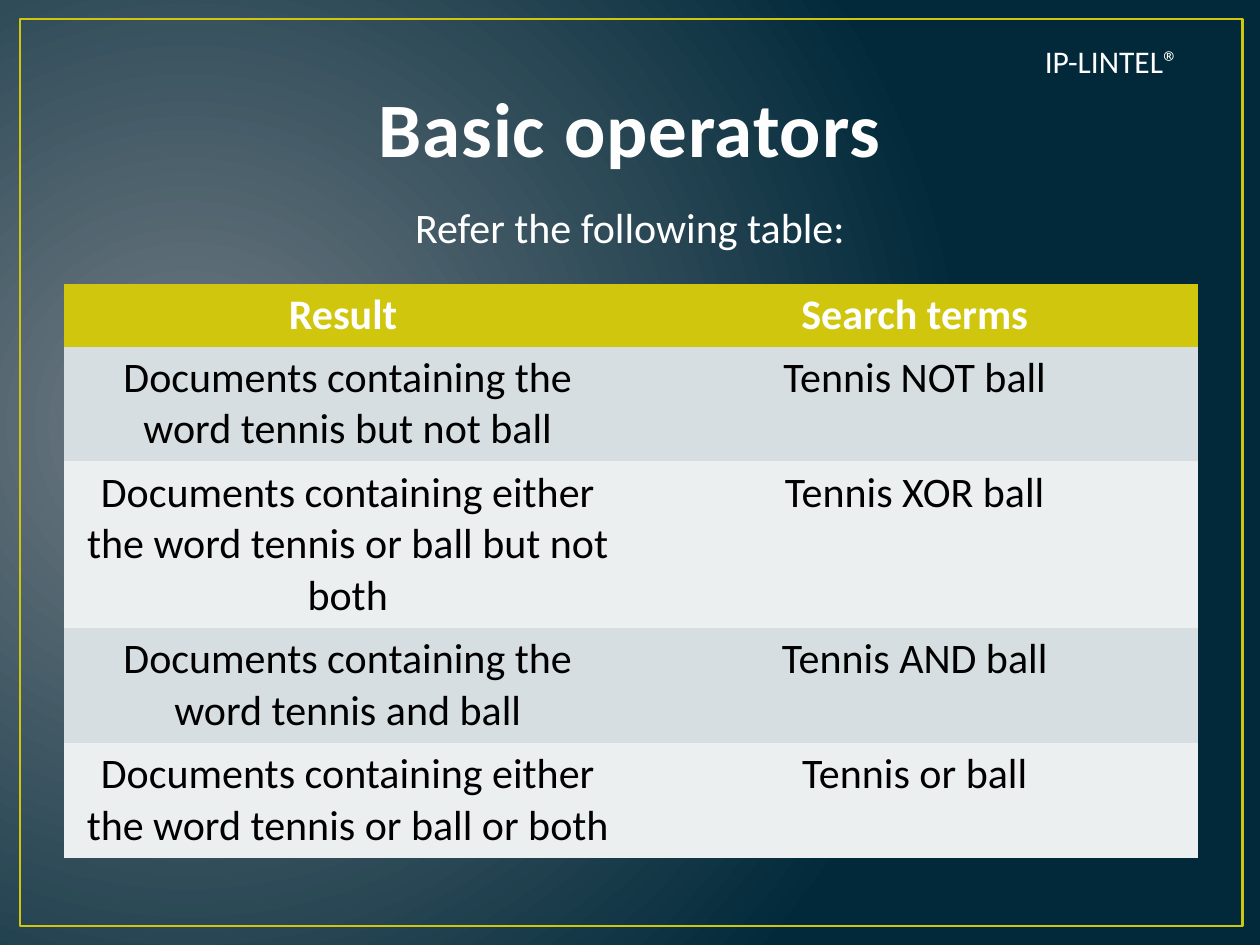
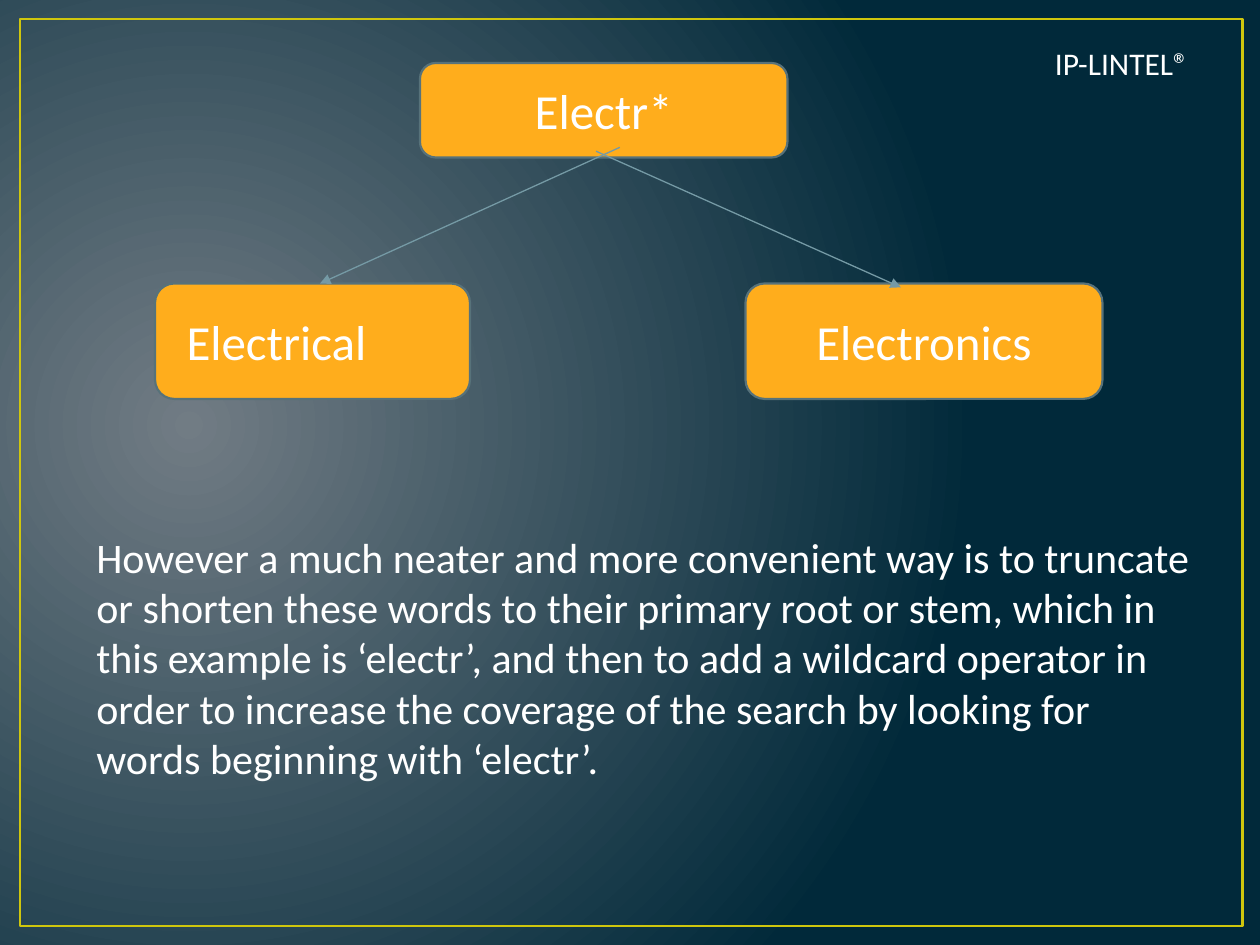
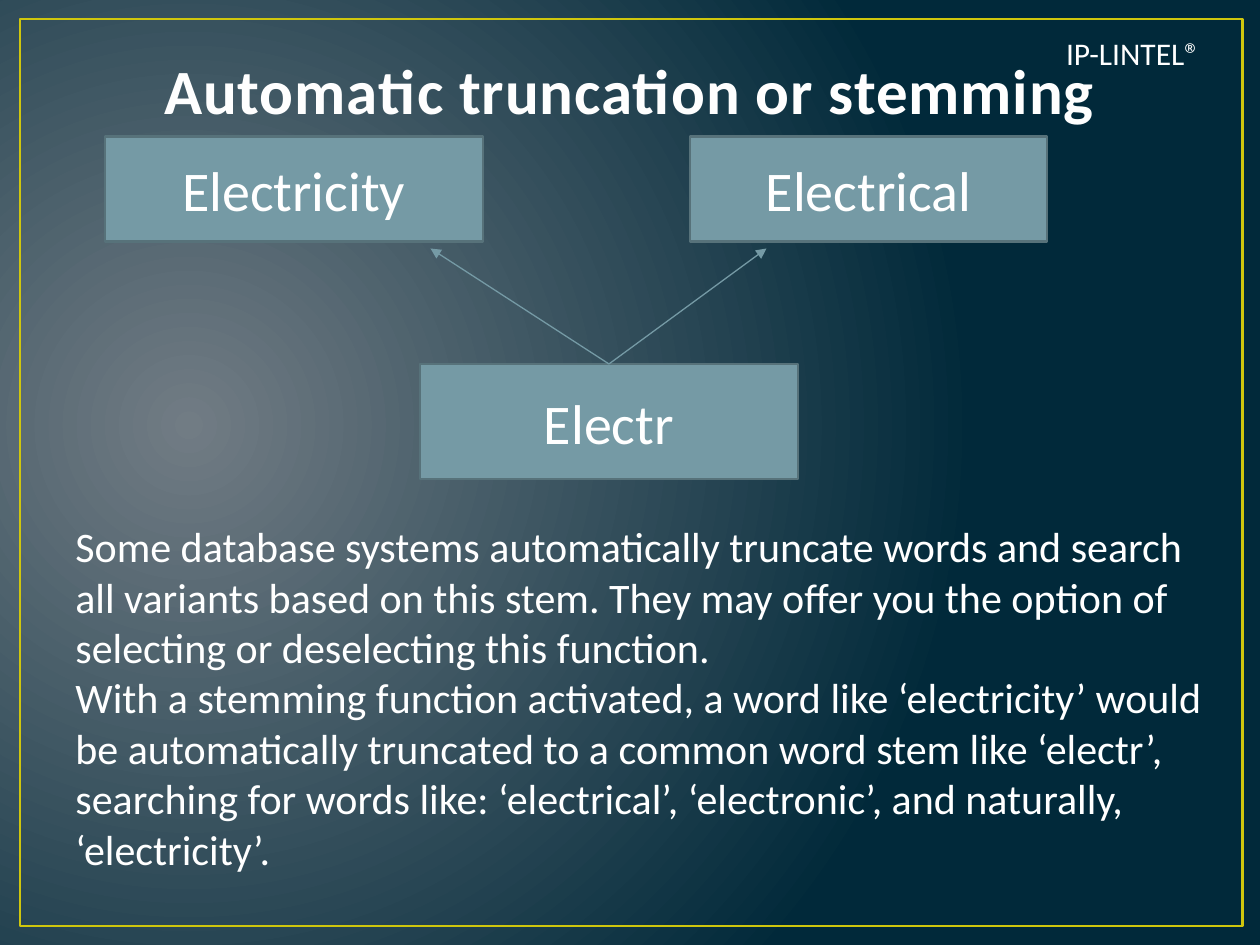
from lxml import etree
from pptx import Presentation
from pptx import util as u
from pptx.dml.color import RGBColor
from pptx.enum import shapes, text
from pptx.oxml import ns

WHITE = RGBColor(0xFF, 0xFF, 0xFF)
TITLE_WHITE = RGBColor(0xFE, 0xFE, 0xFE)
BLACK = RGBColor(0, 0, 0)
GLOW_GREY = RGBColor(0x71, 0x7C, 0x84)
DEEP_BLUE = RGBColor(0x01, 0x29, 0x3A)
LIME = RGBColor(0xCF, 0xC6, 0x0D)
AMBER = RGBColor(0xFF, 0xAD, 0x1C)
STEEL = RGBColor(0x75, 0x9A, 0xA5)
STEEL_DARK = RGBColor(0x57, 0x72, 0x7A)
BANDS = [RGBColor(0xD6, 0xDE, 0xE1), RGBColor(0xEC, 0xEF, 0xF0)]

PAGE_WIDTH, PAGE_HEIGHT = 720, 540
BASE_FONT = {"name": "Calibri", "size": u.Pt(24), "bold": False}
CENTER = text.PP_ALIGN.CENTER
NO_TABLE_STYLE = "{2D5ABB26-0587-4C30-8999-92F81FD0307C}"

# Row height, then the cells
SEARCH_ROWS = [
    (36, "Result ", "Search terms"),
    (65.7, "Documents containing the word tennis but not ball",
     "Tennis NOT ball"),
    (95, "Documents containing either the word tennis or ball but not both",
     "Tennis XOR ball"),
    (65.7, "Documents containing the word tennis and ball",
     "Tennis AND ball"),
    (65.7, "Documents containing either the word tennis or ball or both",
     "Tennis or ball"),
]
WILDCARD_TEXT = [
    "However a much neater and more convenient way is to truncate or shorten "
    "these words to their primary root or stem, which in this example is "
    "‘electr’, and then to add a wildcard operator in order to increase the "
    "coverage of the search by looking for words beginning with ‘electr’.",
]
STEMMING_TEXT = [
    "Some database systems automatically truncate words and search all "
    "variants based on this stem. They may offer you the option of selecting "
    "or deselecting this function.",
    "With a stemming function activated, a word like ‘electricity’ would be "
    "automatically truncated to a common word stem like ‘electr’, searching "
    "for words like: ‘electrical’, ‘electronic’, and naturally, "
    "‘electricity’.",
]


def points(*values):
    return [u.Pt(value) for value in values]


def write(frame, lines, align=None, **formats):
    """Fill a text frame, one paragraph per line."""
    for index, line in enumerate(lines):
        para = frame.add_paragraph() if index else frame.paragraphs[0]
        para.alignment = align
        para._p.get_or_add_pPr().set("defTabSz", str(u.Pt(72)))
        span = para.add_run()
        span.text = line
        settings = {**BASE_FONT, **formats}
        span.font.color.rgb = settings.pop("color", WHITE)
        for name, value in settings.items():
            setattr(span.font, name, value)


def add_text(page, box, lines, align=None, **formats):
    frame = page.shapes.add_textbox(*points(*box)).text_frame
    frame.word_wrap = True
    write(frame, lines, align, **formats)
    return frame


def add_panel(page, kind, box, fill, line, width):
    panel = page.shapes.add_shape(kind, *points(*box))
    panel.shadow.inherit = False
    if fill is None:
        panel.fill.background()
    else:
        panel.fill.solid()
        panel.fill.fore_color.rgb = fill
    panel.line.color.rgb = line
    panel.line.width = u.Pt(width)
    return panel


def add_arrow(page, start, end):
    arrow = page.shapes.add_connector(
        shapes.MSO_CONNECTOR.STRAIGHT, *points(*start, *end))
    arrow.line.color.rgb = STEEL
    arrow.line.width = u.Pt(0.75)
    outline = arrow.line._get_or_add_ln()
    etree.SubElement(outline, ns.qn("a:tailEnd"), type="triangle")
    etree.SubElement(arrow._element.spPr, ns.qn("a:effectLst"))


# Shared look
def paint_background(master):
    fill = master.background.fill
    fill.gradient()
    for stop, color in zip(fill.gradient_stops, (GLOW_GREY, DEEP_BLUE)):
        stop.color.rgb = color
    gradient = master._element.find(".//" + ns.qn("a:gradFill"))
    gradient.remove(gradient.find(ns.qn("a:lin")))
    circle = etree.SubElement(gradient, ns.qn("a:path"), path="circle")
    etree.SubElement(circle, ns.qn("a:fillToRect"),
                     l="15000", t="50000", r="85000", b="60000")


def add_page(deck, label_left, label_top):
    """Start a page with its frame and one-line corner label."""
    page = deck.slides.add_slide(deck.slide_layouts[6])
    add_panel(page, shapes.MSO_SHAPE.RECTANGLE, (11.5, 10.8, 698.4, 518.4),
              None, LIME, 1.5)
    label = add_text(page, (label_left, label_top, 97.2, 29), ["IP-LINTEL®"],
                     CENTER, size=u.Pt(18))
    label.word_wrap = False
    label.auto_size = text.MSO_AUTO_SIZE.SHAPE_TO_FIT_TEXT
    return page


def add_title(page, box, title, size):
    frame = add_text(page, box, [title], CENTER, size=u.Pt(size), bold=True,
                     color=TITLE_WHITE)
    frame.vertical_anchor = text.MSO_ANCHOR.BOTTOM
    frame.paragraphs[0].runs[0].font._element.set("spc", "50")


# Regions
def add_search_table(page, box, rows):
    holder = page.shapes.add_table(len(rows), 2, *points(*box))
    table = holder.table
    table._tbl.tblPr.find(ns.qn("a:tableStyleId")).text = NO_TABLE_STYLE
    for index, (height, *values) in enumerate(rows):
        table.rows[index].height = u.Pt(height)
        header = index == 0
        for cell, value in zip(table.rows[index].cells, values):
            cell.fill.solid()
            cell.fill.fore_color.rgb = LIME if header else BANDS[(index - 1) % 2]
            write(cell.text_frame, [value], CENTER, bold=header,
                  color=WHITE if header else BLACK)


def add_word_tree(page, box, kind, fill, size, nodes, arrows):
    """Draw word boxes and arrows, placed from the corner of the box."""
    left, top = box[:2]
    for word, x, y, width, height in nodes:
        node = add_panel(page, kind, (left + x, top + y, width, height),
                         fill, STEEL_DARK, 1.25)
        node.text_frame.vertical_anchor = text.MSO_ANCHOR.MIDDLE
        node.text_frame.word_wrap = True
        write(node.text_frame, [word], CENTER, size=u.Pt(size))
    for (x1, y1), (x2, y2) in arrows:
        add_arrow(page, (left + x1, top + y1), (left + x2, top + y2))


# Pages
def build_operators(deck):
    page = add_page(deck, 586.8, 20.2)
    add_title(page, (36, 12.2, 648, 90), "Basic operators", 44)
    add_text(page, (51, 111.6, 618, 36), ["Refer the following table:"], CENTER)
    add_search_table(page, (36.7, 162, 648, 295), SEARCH_ROWS)


def build_wildcard(deck):
    page = add_page(deck, 592.6, 21.6)
    add_word_tree(
        page, (88.6, 36, 541.4, 192), shapes.MSO_SHAPE.ROUNDED_RECTANGLE,
        AMBER, 28,
        [("Electr*", 151.4, 0, 210, 54),
         ("Electrical\t", 0, 126, 180, 66),
         ("Electronics", 337.4, 126, 204, 66)],
        [((252, 50.4), (426.2, 128.2)), ((265.6, 48.2), (94.3, 126))])
    add_text(page, (48, 300, 642, 153), WILDCARD_TEXT)


def build_stemming(deck):
    page = add_page(deck, 599, 15.8)
    add_title(page, (36, 13, 648, 63.4), "Automatic truncation or stemming", 36)
    stem = (288, 130)
    add_word_tree(
        page, (60, 78, 538, 196), shapes.MSO_SHAPE.RECTANGLE, STEEL, 32,
        [("Electricity", 0, 0, 216, 60),
         ("Electrical", 334.4, 0, 204, 60),
         ("Electr", 180, 130, 216, 66)],
        [(stem, (186, 64)), (stem, (378, 64))])
    add_text(page, (36, 294, 660, 211), STEMMING_TEXT)


def main():
    deck = Presentation()
    deck.slide_width, deck.slide_height = points(PAGE_WIDTH, PAGE_HEIGHT)
    paint_background(deck.slide_master)
    for build in (build_operators, build_wildcard, build_stemming):
        build(deck)
    deck.save("out.pptx")


if __name__ == "__main__":
    main()
